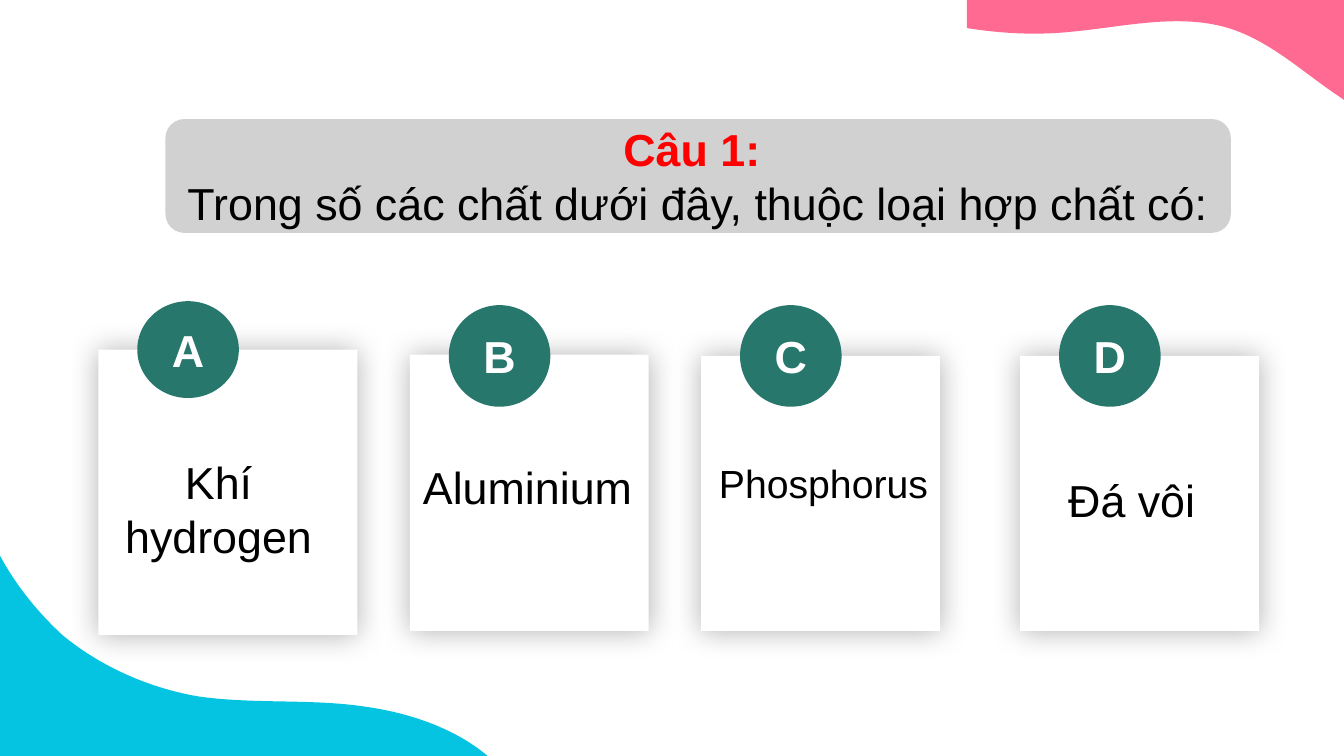
from lxml import etree
from pptx import Presentation, util as u
from pptx.dml.color import RGBColor
from pptx.enum import shapes, text
from pptx.oxml.ns import qn

SIZE = (33.87, 19.05)
FONT = "Arial"
TEAL, WHITE, BLACK, RED, GREY = "27776D", "FFFFFF", "000000", "FF0000", "A5A5A5"

BANNER = (4.17, 3, 26.85, 2.87)
LINES = [
    ("Câu 1: ", RED, True),
    ("Trong số các chất dưới đây, thuộc loại hợp chất có:", BLACK, False),
]

CARDS = [
    dict(key="A", word="Khí hydrogen", size=32, mid=True, card=(2.48, 8.81, 6.53, 7.19),
         badge=(7.59, 2.44), label=(2.55, 11.33, 5.92, 3)),
    dict(key="B", word="Aluminium", size=32, mid=False, card=(10.33, 8.94, 6.02, 6.96),
         badge=(7.69, 2.56), label=(10.41, 11.46, 5.92, 1.62)),
    dict(key="C", word="Phosphorus", size=28, mid=False, card=(17.67, 8.97, 6.02, 6.93),
         badge=(7.69, 2.56), label=(17.87, 11.46, 5.92, 1.45)),
    dict(key="D", word="Đá vôi", size=32, mid=False, card=(25.71, 8.97, 6.02, 6.93),
         badge=(7.69, 2.56), label=(26.67, 11.79, 4.34, 1.62)),
]
INSET, DISC = 0.98, 2.56

WAVES = [
    ("FF6A92", [
        (24.37, 0), (33.87, 0), (33.87, 2.52), (33.76, 2.44),
        (32.87, 1.85, 32.08, 1.09, 31.06, 0.74),
        (29.74, 0.3, 28.3, 0.69, 26.9, 0.81),
        (26.06, 0.89, 25.2, 0.84, 24.38, 0.71),
        (24.37, 0.71),
    ]),
    ("04C4E1", [
        (0, 19.05), (0, 14),
        (0.38, 14.71, 0.91, 15.39, 1.57, 16),
        (2.46, 16.74, 3.66, 17.32, 5, 17.55),
        (6.4, 17.75, 7.85, 17.6, 9.22, 17.81),
        (10.41, 17.98, 11.51, 18.39, 12.29, 19.05),
    ]),
]


def paint(target, color):
    target.solid()
    target.fore_color.rgb = RGBColor.from_string(color)


def dress(shape, color):
    shape.shadow.inherit = False
    paint(shape.fill, color)
    shape.line.fill.background()
    return shape


def block(home, kind, box, color):
    return dress(home.add_shape(kind, *map(u.Cm, box)), color)


def fade(node, percent):
    etree.SubElement(node, qn("a:alpha"), val=str(percent * 1000))


def glow(shape):
    effects = shape._element.spPr.find(qn("a:effectLst"))
    shade = etree.SubElement(effects, qn("a:outerShdw"), blurRad=str(u.Pt(21)),
                             dist="0", dir="0", algn="ctr", rotWithShape="0")
    fade(etree.SubElement(shade, qn("a:srgbClr"), val=BLACK), 30)


def write(frame, lines, size, mid=True):
    frame.word_wrap = True
    for i, (words, color, bold) in enumerate(lines):
        para = frame.add_paragraph() if i else frame.paragraphs[0]
        para.text = words
        para.alignment = text.PP_ALIGN.CENTER if mid else text.PP_ALIGN.LEFT
        font = para.font
        font.name, font.size, font.bold = FONT, u.Pt(size), bold
        paint(font.fill, color)


def wave(home, moves):
    points = [(u.Cm(x), u.Cm(y)) for move in moves for x, y in zip(move[::2], move[1::2])]
    pen = home.build_freeform(*points[0])
    pen.add_line_segments(points[1:], close=True)
    shape = pen.convert_to_shape()
    steps = iter(list(shape._element.iter(qn("a:lnTo"))))
    for move in moves[1:]:
        parts = [next(steps) for _ in move[::2]]
        if len(parts) == 3:
            curve = etree.Element(qn("a:cubicBezTo"))
            parts[0].addprevious(curve)
            for part in parts:
                curve.append(part[0])
                part.getparent().remove(part)
    return shape


def main():
    deck = Presentation()
    deck.slide_width, deck.slide_height = map(u.Cm, SIZE)
    slide = deck.slides.add_slide(deck.slide_layouts[6])
    kinds = shapes.MSO_SHAPE

    for item in CARDS:
        group = slide.shapes.add_group_shape().shapes
        glow(block(group, kinds.RECTANGLE, item["card"], WHITE))
        top, tall = item["badge"]
        disc = block(group, kinds.OVAL, (item["card"][0] + INSET, top, DISC, tall), TEAL)
        disc.text_frame.vertical_anchor = text.MSO_ANCHOR.MIDDLE
        write(disc.text_frame, [(item["key"], WHITE, True)], 32)
        label = group.add_textbox(*map(u.Cm, item["label"])).text_frame
        label.auto_size = text.MSO_AUTO_SIZE.SHAPE_TO_FIT_TEXT
        write(label, [(item["word"], BLACK, False)], item["size"], item["mid"])

    banner = block(slide.shapes, kinds.ROUNDED_RECTANGLE, BANNER, GREY)
    fade(banner._element.spPr.find(qn("a:solidFill"))[0], 50)
    banner.text_frame.vertical_anchor = text.MSO_ANCHOR.MIDDLE
    write(banner.text_frame, LINES, 32)

    for color, moves in WAVES:
        dress(wave(slide.shapes, moves), color)

    deck.save("out.pptx")


if __name__ == "__main__":
    main()
